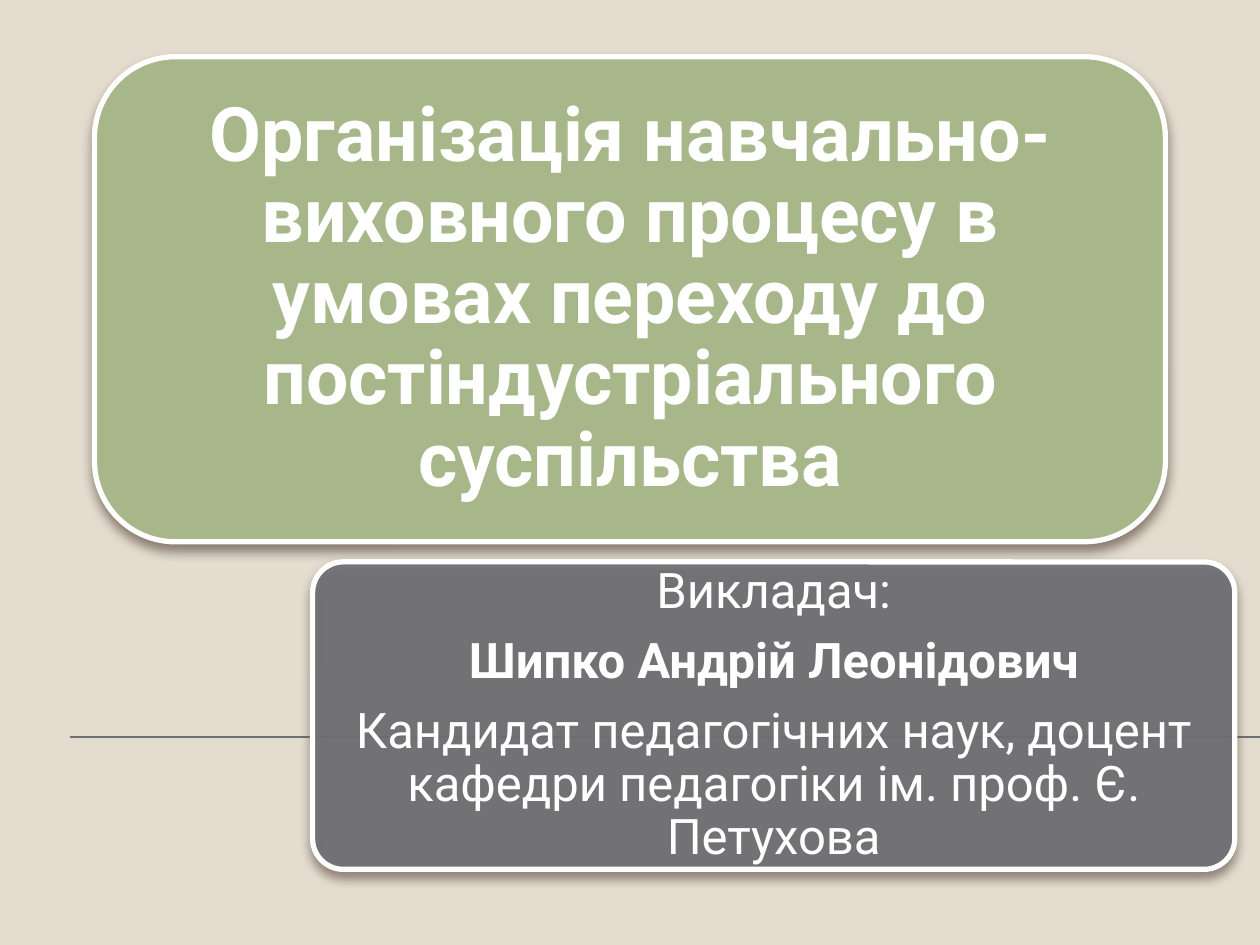
import pptx
import pptx.util
import pptx.dml.color
import pptx.enum.shapes
import pptx.enum.text
import pptx.oxml
import pptx.oxml.ns
from lxml import etree

Pt = pptx.util.Pt
RGBColor = pptx.dml.color.RGBColor
qn = pptx.oxml.ns.qn

SAND = RGBColor(0xE3, 0xDC, 0xCF)
GREEN = RGBColor(0xA7, 0xB7, 0x89)
GREY = RGBColor(0x6F, 0x6F, 0x74)
WHITE = RGBColor(0xFF, 0xFF, 0xFF)
BROWN = RGBColor(0x4E, 0x3B, 0x30)
FONT = "Roboto"

# Boxes are left, top, width, height; paragraphs are (text, bold).
CARDS = [
    dict(box=(54, 32.4, 612, 277.2), corner=0.1667, fill=GREEN, opacity=100,
         inset=13.2, margin=13, size=43,
         paragraphs=[("Організація навчально-виховного процесу в умовах "
                      "переходу до постіндустріального суспільства", True)]),
    dict(box=(178.6, 321.1, 527, 175.7), corner=0.1, fill=GREY, opacity=90,
         inset=5.2, margin=8.6, size=28,
         paragraphs=[("Викладач:", False),
                     ("Шипко Андрій Леонідович", True),
                     ("Кандидат педагогічних наук, доцент кафедри педагогіки "
                      "ім. проф. Є. Петухова", False)]),
]
RULE = (40.3, 421.2, 720, 421.2)


def add_alpha(color_element, percent):
    etree.SubElement(color_element, qn("a:alpha"), val=str(percent * 1000))


def add_soft_shadow(shape):
    shape.shadow.inherit = False
    effects = shape._element.spPr.find(qn("a:effectLst"))
    shadow = etree.SubElement(
        effects, qn("a:outerShdw"), blurRad=str(Pt(6)), dist=str(Pt(4)),
        dir="5400000", rotWithShape="0")
    add_alpha(etree.SubElement(shadow, qn("a:srgbClr"), val=str(BROWN)), 60)


def add_card(slide, card):
    """Group a rounded panel with the text laid over it."""
    group = slide.shapes.add_group_shape()
    left, top, width, height = card["box"]
    panel = group.shapes.add_shape(
        pptx.enum.shapes.MSO_SHAPE.ROUNDED_RECTANGLE,
        Pt(left), Pt(top), Pt(width), Pt(height))
    panel.adjustments[0] = card["corner"]
    panel.fill.solid()
    panel.fill.fore_color.rgb = card["fill"]
    if card["opacity"] < 100:
        add_alpha(panel._element.spPr.find(qn("a:solidFill"))[0], card["opacity"])
    panel.line.color.rgb = WHITE
    panel.line.width = Pt(3)
    add_soft_shadow(panel)

    inset = card["inset"]
    label = group.shapes.add_textbox(
        Pt(left + inset), Pt(top + inset),
        Pt(width - 2 * inset), Pt(height - 2 * inset))
    frame = label.text_frame
    frame.word_wrap = True
    frame.vertical_anchor = pptx.enum.text.MSO_ANCHOR.MIDDLE
    frame.margin_left = frame.margin_right = Pt(card["margin"])
    frame.margin_top = frame.margin_bottom = Pt(card["margin"])
    frame.text = "\n".join(text for text, _ in card["paragraphs"])
    for paragraph, (_, bold) in zip(frame.paragraphs, card["paragraphs"]):
        paragraph.alignment = pptx.enum.text.PP_ALIGN.CENTER
        paragraph.line_spacing = 0.9
        paragraph.space_after = Pt(round(0.35 * card["size"], 1))
        font = paragraph.runs[0].font
        font.name = FONT
        font.size = Pt(card["size"])
        font.bold = bold
        font.color.rgb = WHITE


def main():
    deck = pptx.Presentation()
    deck.slide_width, deck.slide_height = Pt(720), Pt(540)
    slide = deck.slides.add_slide(deck.slide_layouts[6])
    slide.background.fill.solid()
    slide.background.fill.fore_color.rgb = SAND

    rule = slide.shapes.add_connector(
        pptx.enum.shapes.MSO_CONNECTOR.STRAIGHT, *map(Pt, RULE))
    rule.line.color.rgb = GREY
    rule.line.width = Pt(0.75)
    etree.SubElement(rule._element.spPr, qn("a:effectLst"))

    for card in CARDS:
        add_card(slide, card)
    deck.save("out.pptx")


if __name__ == "__main__":
    main()
